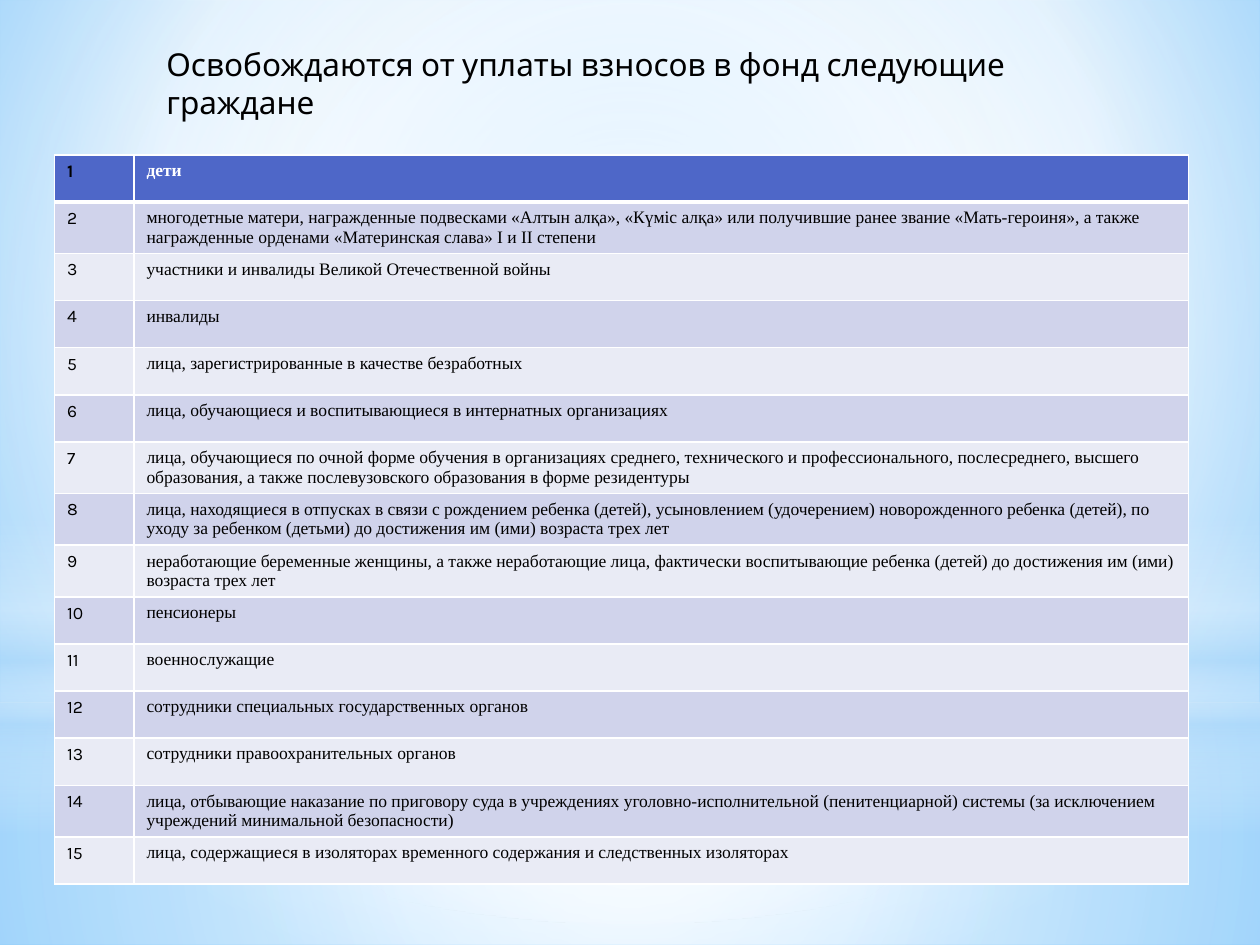
from lxml import etree
from pptx import Presentation
from pptx.dml.color import RGBColor
from pptx.enum import shapes, text
from pptx.oxml import ns
from pptx.util import Cm, Pt

HEADING = "Освобождаются от уплаты взносов в фонд следующие граждане"
CITIZENS = [
    "дети",
    "многодетные матери, награжденные подвесками «Алтын алқа», «Күміс алқа» или получившие "
    "ранее звание «Мать-героиня», а также награжденные орденами «Материнская слава» I и II степени",
    "участники и инвалиды Великой Отечественной войны",
    "инвалиды",
    "лица, зарегистрированные в качестве безработных",
    "лица, обучающиеся и воспитывающиеся в интернатных организациях",
    "лица, обучающиеся по очной форме обучения в организациях среднего, технического и "
    "профессионального, послесреднего, высшего образования, а также послевузовского "
    "образования в форме резидентуры",
    "лица, находящиеся в отпусках в связи с рождением ребенка (детей), усыновлением "
    "(удочерением) новорожденного ребенка (детей), по уходу за ребенком (детьми) до "
    "достижения им (ими) возраста трех лет",
    "неработающие беременные женщины, а также неработающие лица, фактически воспитывающие "
    "ребенка (детей) до достижения им (ими) возраста трех лет",
    "пенсионеры",
    "военнослужащие",
    "сотрудники специальных государственных органов",
    "сотрудники правоохранительных органов",
    "лица, отбывающие наказание по приговору суда в учреждениях уголовно-исполнительной "
    "(пенитенциарной) системы (за исключением учреждений минимальной безопасности)",
    "лица, содержащиеся в изоляторах временного содержания и следственных изоляторах",
]
TWO_LINES = 120  # texts longer than this take two lines
WIDTH, HEIGHT = 25.4, 19.05
CENTRE = (50, 50, 50, 50)


def rgb(value):
    return RGBColor.from_string(value)


def set_format(obj, **values):
    for name, value in values.items():
        setattr(obj, name, value)


def add_xml(parent, tag, **attrs):
    return etree.SubElement(parent, ns.qn(tag), {k: str(v) for k, v in attrs.items()})


def set_gradient(fill, parent, stops, focus=None):
    """Fill with (position, colour, opacity) stops, round if a focus is given."""
    fill.solid()
    solid = parent.find(ns.qn("a:solidFill"))
    grad = etree.Element(ns.qn("a:gradFill"), rotWithShape="1")
    stop_list = add_xml(grad, "a:gsLst")
    for position, colour, opacity in stops:
        stop = add_xml(stop_list, "a:gs", pos=position * 1000)
        clr = add_xml(stop, "a:srgbClr", val=colour)
        if opacity < 100:
            add_xml(clr, "a:alpha", val=opacity * 1000)
    if focus:
        sides = {side: share * 1000 for side, share in zip("ltrb", focus)}
        add_xml(add_xml(grad, "a:path", path="circle"), "a:fillToRect", **sides)
    else:
        add_xml(grad, "a:lin", ang=90 * 60000, scaled=0)
    parent.replace(solid, grad)


def add_backdrop(s):
    # Slide background
    fill = s.background.fill
    fill.solid()
    bg = s._element.cSld.find(ns.qn("p:bg")).find(ns.qn("p:bgPr"))
    set_gradient(fill, bg, [(0, "9ED5FF", 100), (60, "FFFFFF", 100), (100, "5BB9FF", 100)],
                 (20, 10, 20, 60))

    # Translucent sky, floor, horizon and glow
    rect, oval = shapes.MSO_SHAPE.RECTANGLE, shapes.MSO_SHAPE.OVAL
    horizon = 14.17
    layers = [
        (rect, horizon, HEIGHT - horizon, CENTRE,
         [(0, "FFFFFF", 91), (37, "FFFFFF", 76), (100, "B4DCFA", 79)]),
        (rect, 0, horizon, CENTRE,
         [(0, "FFFFFF", 89), (48, "FFFFFF", 62), (100, "B4DCFA", 79)]),
        (rect, 10.46, 6.35, None,
         [(0, "FFFFFF", 0), (29, "FFFFFF", 30), (45, "B4DCFA", 40),
          (55, "FFFFFF", 26), (65, "B4DCFA", 60), (100, "FFFFFF", 0)]),
        (oval, 4.45, horizon, CENTRE, [(0, "FFFFFF", 100), (56, "FFFFFF", 0)]),
    ]
    for kind, top, height, focus, stops in layers:
        sp = s.shapes.add_shape(kind, 0, Cm(top), Cm(WIDTH), Cm(height))
        sp.shadow.inherit = False
        sp.line.fill.background()
        set_gradient(sp.fill, sp._element.spPr, stops, focus)


def fill_cell(cell, words, font, colour, fill, header):
    tc_pr = cell._tc.get_or_add_tcPr()
    for side in "LRTB":
        width = Pt(3 if header and side == "B" else 1)
        line = add_xml(tc_pr, f"a:ln{side}", w=width)
        add_xml(add_xml(line, "a:solidFill"), "a:srgbClr", val="FFFFFF")
    cell.fill.solid()
    cell.fill.fore_color.rgb = rgb(fill)
    r = cell.text_frame.paragraphs[0].add_run()
    r.text = words
    set_format(r.font, name=font, size=Pt(10), bold=header)
    r.font.color.rgb = rgb(colour)


def add_citizens(s, left, top, width):
    number_width = 1.6
    heights = [1.04 if len(words) > TWO_LINES else 0.95 for words in CITIZENS]
    frame = s.shapes.add_table(len(CITIZENS), 2, Cm(left), Cm(top), Cm(width), Cm(sum(heights)))
    table = frame.table
    for column, size in zip(table.columns, (number_width, width - number_width)):
        column.width = Cm(size)
    for i, (words, height) in enumerate(zip(CITIZENS, heights)):
        table.rows[i].height = Cm(height)
        header = i == 0
        fill = "4E67C8" if header else ("E9EBF5", "D0D3EB")[i % 2]
        fill_cell(table.cell(i, 0), str(i + 1), "Karla", "000000", fill, header)
        fill_cell(table.cell(i, 1), words, "Times New Roman",
                  "FFFFFF" if header else "000000", fill, header)


def place_heading(s, left, top, width, height):
    title = s.shapes.title
    set_format(title, left=Cm(left), top=Cm(top), width=Cm(width), height=Cm(height))
    tf = title.text_frame
    set_format(tf, word_wrap=True, auto_size=text.MSO_AUTO_SIZE.NONE,
               vertical_anchor=text.MSO_ANCHOR.TOP)
    p = tf.paragraphs[0]
    p.alignment = text.PP_ALIGN.LEFT
    r = p.add_run()
    r.text = HEADING
    set_format(r.font, name="Karla", size=Pt(18), bold=False)
    r.font.color.rgb = rgb("000000")
    s.shapes._spTree.append(title._element)  # bring to front


def main():
    prs = Presentation()
    set_format(prs, slide_width=Cm(WIDTH), slide_height=Cm(HEIGHT))
    s = prs.slides.add_slide(prs.slide_layouts[5])
    add_backdrop(s)
    add_citizens(s, 1.1, 3.12, 22.86)
    place_heading(s, 3.1, 0.79, 19.6, 1.8)
    prs.save("out.pptx")


if __name__ == "__main__":
    main()
